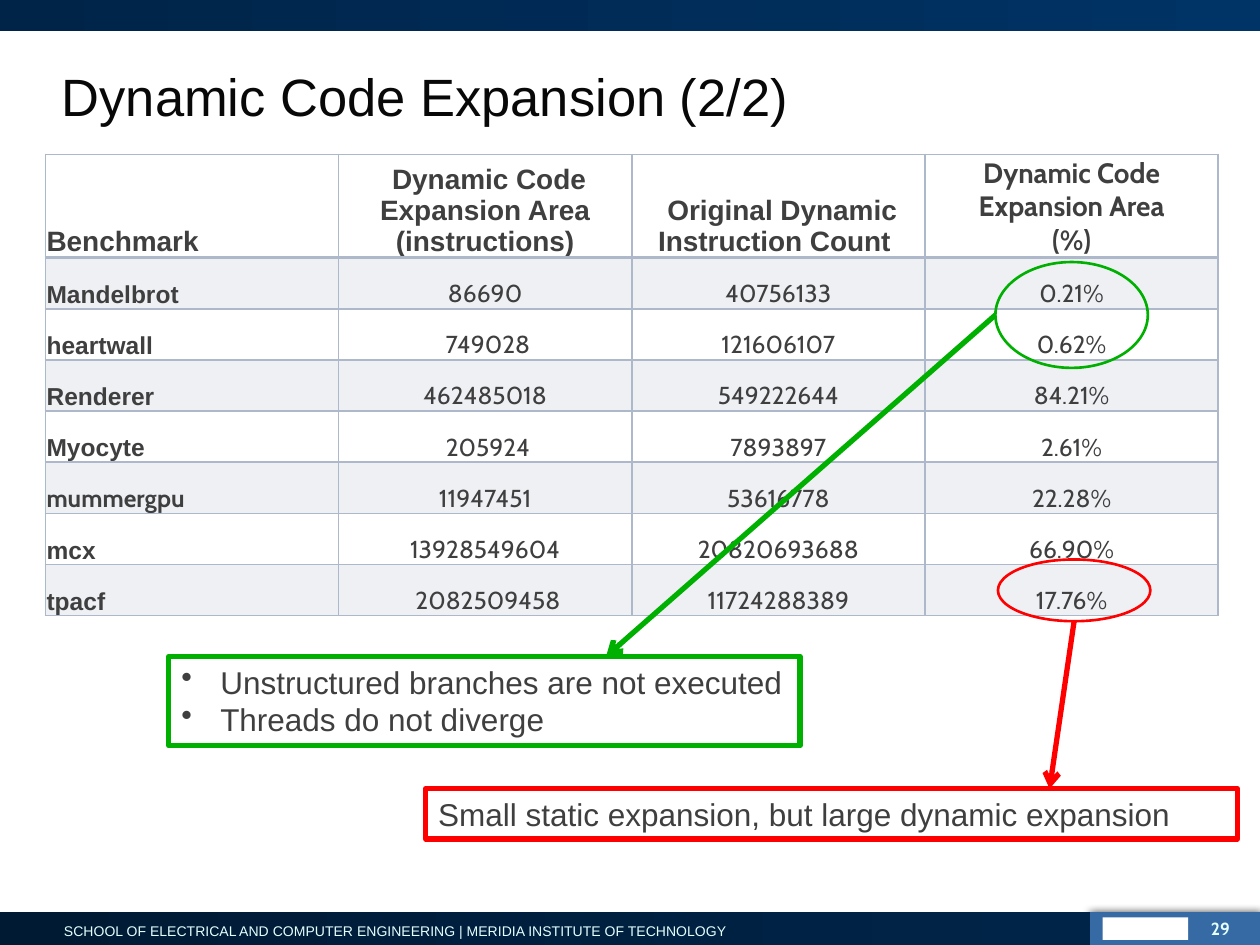
from dataclasses import dataclass

from lxml import etree
from pptx import Presentation, util as u
from pptx.dml.color import RGBColor
from pptx.enum import shapes, text
from pptx.oxml import ns


@dataclass(frozen=True)
class Theme:
    sans: str = "Arial"
    display: str = "Cabin"
    title: str = "080808"
    ink: str = "3F3F3F"
    pale: str = "E5FFFF"
    white: str = "FFFFFF"
    panel: str = "366AA4"
    navy: tuple = ("001A34", "002448", "003366")
    grid: str = "ADB8CA"
    green: str = "00B000"
    red: str = "FF0000"
    title_size: int = 30
    note_size: int = 18
    head_size: int = 16
    body_size: int = 14
    number_size: int = 10
    footer_size: int = 8


THEME = Theme()
CELL = u.Inches(0.1)  # the slide is a grid of 100 columns by 75 rows
COLUMNS, ROWS = 100, 75
FOOTER_TOP = 72.4

# One entry per table row; a newline starts a new paragraph
HEADER = ["Benchmark", " Dynamic Code Expansion Area\n(instructions)",
          " Original Dynamic Instruction Count ", "Dynamic Code Expansion Area\n(%)"]
BENCHMARKS = [
    ["Mandelbrot", " 86690 ", "40756133", "0.21%"],
    ["heartwall", " 749028", "121606107", "0.62%"],
    ["Renderer", "462485018", "549222644", "84.21%"],
    ["Myocyte", " 205924", "7893897", "2.61%"],
    ["mummergpu", "11947451", "53616778", "22.28%"],
    ["mcx", "13928549604", "20820693688", "66.90%"],
    ["tpacf", " 2082509458", "11724288389", "17.76%"],
]


def grid(*lengths):
    return [round(length * CELL) for length in lengths]


def color(code):
    return RGBColor.from_string(code)


def child(parent, tag, **attributes):
    element = etree.SubElement(parent, ns.qn(tag))
    for name, value in attributes.items():
        element.set(name, str(value))
    return element


def write(frame, lines, size, ink, font=THEME.sans, bold=False, align=None):
    """Fill a text frame with one paragraph per line."""
    for index, line in enumerate(lines):
        para = frame.add_paragraph() if index else frame.paragraphs[0]
        para.text = line
        para.alignment = align
        para.font.size = u.Pt(size)
        para.font.name = font
        para.font.bold = bold
        para.font.color.rgb = color(ink)


def add_shape(page, kind, place, fill=None, line=None, width=0):
    shape = page.shapes.add_shape(kind, *grid(*place))
    shape.shadow.inherit = False
    if fill is None:
        shape.fill.background()
    elif isinstance(fill, str):
        shape.fill.solid()
        shape.fill.fore_color.rgb = color(fill)
    else:
        shape.fill.gradient()
        shape.fill.gradient_angle = 0
        for stop, code in zip(shape.fill.gradient_stops, fill):
            stop.color.rgb = color(code)
    if line is None:
        shape.line.fill.background()
    else:
        shape.line.color.rgb = color(line)
        shape.line.width = u.Pt(width)
    return shape


def add_label(page, place, line, size, **style):
    box = page.shapes.add_textbox(*grid(*place))
    box.text_frame.word_wrap = True
    write(box.text_frame, [line], size, THEME.pale, **style)


def add_frame(page):
    """Top band, footer band and the panel at the right of the footer."""
    rect = shapes.MSO_SHAPE.RECTANGLE
    depth = ROWS - FOOTER_TOP
    panel = add_shape(page, rect, (86.4, FOOTER_TOP, 13.6, depth), THEME.panel)
    effects = panel._element.spPr.find(ns.qn("a:effectLst"))
    shadow = child(effects, "a:outerShdw", blurRad=u.Pt(5), dist=u.Pt(1), dir=0)
    child(child(shadow, "a:srgbClr", val="000000"), "a:alpha", val=75000)
    add_shape(page, rect, (87.5, 72.8, 6.8, 1.8), THEME.white)  # emblem block
    add_shape(page, rect, (0, FOOTER_TOP, 86.5, depth), THEME.navy[:2])
    add_shape(page, rect, (0, 0, COLUMNS, 2.5), THEME.navy[1:])
    add_label(page, (4.1, 72.7, 60, 2.3),
              "SCHOOL OF ELECTRICAL AND COMPUTER ENGINEERING | MERIDIA INSTITUTE OF TECHNOLOGY",
              THEME.footer_size)
    add_label(page, (94.4, FOOTER_TOP, 4.2, 2.3), "29", THEME.number_size,
              font=THEME.display, bold=True, align=text.PP_ALIGN.RIGHT)


def add_title(page, line):
    title = page.shapes.title
    title.left, title.top, title.width, title.height = grid(3.9, 2.4, 93, 10.4)
    title.text_frame.vertical_anchor = text.MSO_ANCHOR.MIDDLE
    write(title.text_frame, [line], THEME.title_size, THEME.title,
          align=text.PP_ALIGN.LEFT)


def style_cell(cell, row):
    """Band every other row and rule all four sides."""
    cell.vertical_anchor = text.MSO_ANCHOR.BOTTOM
    cell.margin_left = cell.margin_right = cell.margin_top = u.Inches(0.01)
    cell.margin_bottom = 0
    properties = cell._tc.get_or_add_tcPr()
    if row % 2:
        cell.fill.solid()
        cell.fill.fore_color.rgb = color(THEME.grid)
        tint = properties.find(".//" + ns.qn("a:srgbClr"))
        child(tint, "a:alpha", val=20000)
    else:
        cell.fill.background()
    for index, side in enumerate("LRTB"):
        under_header = (row, side) in ((0, "B"), (1, "T"))
        line = child(properties, f"a:ln{side}", w=u.Pt(2 if under_header else 1))
        child(child(line, "a:solidFill"), "a:srgbClr", val=THEME.grid)
        properties.insert(index, line)


def add_benchmarks(page):
    rows = [HEADER] + BENCHMARKS
    place = grid(3.6, 12.25, 93.1, 36.6)
    table = page.shapes.add_table(len(rows), len(HEADER), *place).table
    table.first_row = table.horz_banding = False
    for column in table.columns:
        column.width = place[2] // len(HEADER)
    for r, values in enumerate(rows):
        table.rows[r].height = grid(4.06 if r else 8.2)[0]
        for c, value in enumerate(values):
            cell = table.cell(r, c)
            style_cell(cell, r)
            display = value == "mummergpu" or (c > 0 if r else c == 3)
            write(cell.text_frame, value.split("\n"),
                  THEME.body_size if r else THEME.head_size, THEME.ink,
                  font=THEME.display if display else THEME.sans,
                  bold=r == 0 or c == 0,
                  align=text.PP_ALIGN.CENTER if c else text.PP_ALIGN.LEFT)


def add_callout(page, ring, anchor, tip, note, lines, ink, bulleted=False):
    """Ring some values and point an arrow from the ring to a boxed note.

    The anchor is where the arrow leaves the ring, as shares of its size.
    """
    add_shape(page, shapes.MSO_SHAPE.OVAL, ring, line=ink, width=1.5)
    left, top, width, height = ring
    start = (left + anchor[0] * width, top + anchor[1] * height)
    arrow = page.shapes.add_connector(shapes.MSO_CONNECTOR.STRAIGHT, *grid(*start, *tip))
    arrow.line.color.rgb = color(ink)
    arrow.line.width = u.Pt(3)
    child(arrow.line._get_or_add_ln(), "a:tailEnd", type="arrow")
    child(arrow._element.spPr, "a:effectLst")

    box = add_shape(page, shapes.MSO_SHAPE.RECTANGLE, note, line=ink, width=3)
    frame = box.text_frame
    frame.word_wrap = True
    frame.vertical_anchor = text.MSO_ANCHOR.TOP
    write(frame, lines, THEME.note_size, THEME.ink, align=text.PP_ALIGN.LEFT)
    for para in frame.paragraphs if bulleted else ():
        properties = para._p.get_or_add_pPr()
        properties.set("marL", str(u.Inches(0.31)))
        properties.set("indent", str(-u.Inches(0.31)))
        properties.insert(0, child(properties, "a:buChar", char="•"))


def main():
    deck = Presentation()
    deck.slide_width, deck.slide_height = grid(COLUMNS, ROWS)
    page = deck.slides.add_slide(deck.slide_layouts[5])
    add_frame(page)
    add_title(page, "Dynamic Code Expansion (2/2)")
    add_benchmarks(page)
    add_callout(page, (79, 20.8, 12.1, 8.4), (0, 0.5), (48.1, 52.1), (13.4, 52.1, 50.1, 7.1),
                ["Unstructured branches are not executed", "Threads do not diverge"],
                THEME.green, bulleted=True)
    add_callout(page, (79.2, 44.4, 12.1, 4.9), (0.5, 1), (83.3, 62.6), (33.8, 62.6, 64.4, 4),
                ["Small static expansion, but large dynamic expansion"], THEME.red)
    deck.save("out.pptx")


if __name__ == "__main__":
    main()
